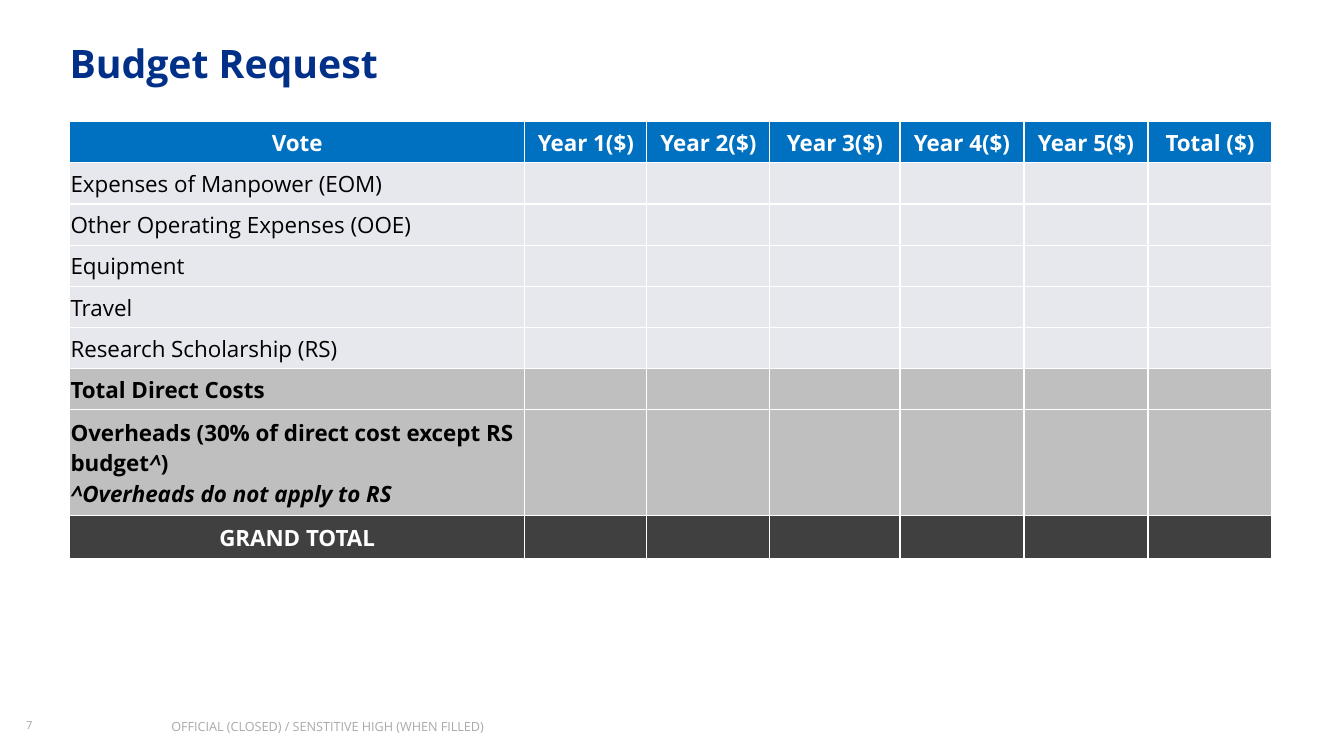
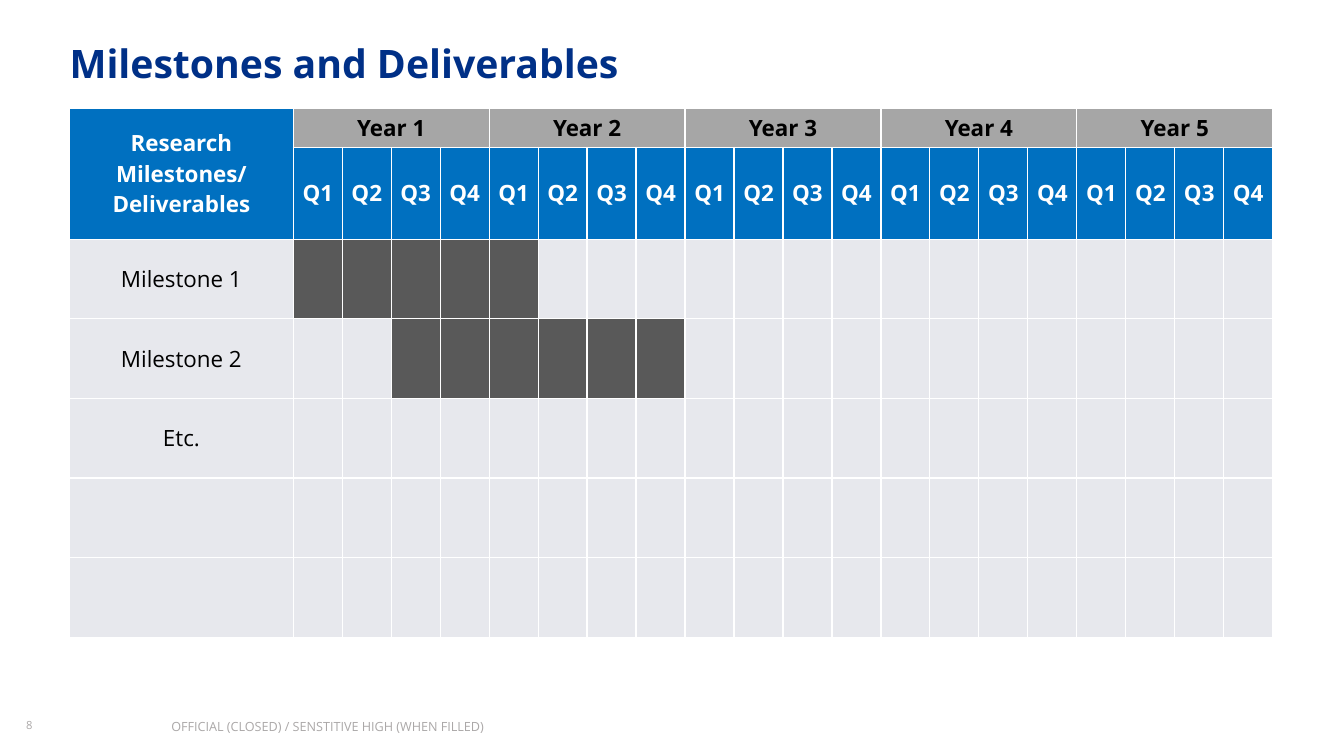
from lxml import etree
from pptx import Presentation
from pptx.dml.color import RGBColor
from pptx.enum.text import MSO_ANCHOR, MSO_AUTO_SIZE, PP_ALIGN
from pptx.oxml.ns import qn
from pptx.util import Pt

LEFT, CENTER = PP_ALIGN.LEFT, PP_ALIGN.CENTER
TOP, MIDDLE = MSO_ANCHOR.TOP, MSO_ANCHOR.MIDDLE
FIXED = MSO_AUTO_SIZE.NONE

FONT = "Open Sans"
HEX = {
    "navy": "003087",
    "blue": "0070C0",
    "pale": "E7E8ED",
    "silver": "BFBFBF",
    "grey": "A6A6A6",
    "slate": "595959",
    "dark": "404040",
    "black": "000000",
    "white": "FFFFFF",
    "foot": "ABA8A8",
}
EDGE = 49.7
NOTICE = "OFFICIAL (CLOSED) / SENSTITIVE HIGH (WHEN FILLED)"
YEARS, TERMS = 5, 4


def rgb(name):
    return RGBColor.from_string(HEX[name])


def write(frame, text, size=16, color="black", bold=False, align=LEFT,
          anchor=MIDDLE, pad=(0, 0, 0, 0)):
    frame.word_wrap = True
    frame.vertical_anchor = anchor
    sides = ("margin_left", "margin_top", "margin_right", "margin_bottom")
    for side, gap in zip(sides, pad):
        setattr(frame, side, Pt(gap))
    lines = [text] if isinstance(text, str) else text
    for row, line in enumerate(lines):
        para = frame.add_paragraph() if row else frame.paragraphs[0]
        para.alignment = align
        para.space_before = Pt(0)
        parts = (line,) if isinstance(line, str) else line
        for spot, part in enumerate(parts):
            if not part:
                continue
            run = para.add_run()
            run.text = part
            font = run.font
            font.name, font.size, font.bold = FONT, Pt(size), bold
            font.italic = spot % 2 == 1
            font.color.rgb = rgb(color)


def label(slide, text, left, width, size):
    box = slide.shapes.add_textbox(Pt(left), Pt(513.4), Pt(width), Pt(13.6))
    write(box.text_frame, text, size=size, color="foot", anchor=TOP)


def page(deck, title, number):
    slide = deck.slides.add_slide(deck.slide_layouts[5])
    head = slide.shapes.title
    head.left, head.top, head.width, head.height = (
        Pt(EDGE), Pt(28), Pt(793.4), Pt(38))
    write(head.text_frame, title, size=28, color="navy", bold=True, anchor=TOP)
    head.text_frame.auto_size = FIXED
    label(slide, str(number), 18.7, 56.9, 8)
    label(slide, NOTICE, 122.4, 383.8, 9)
    return slide


def border(cell):
    props = cell._tc.get_or_add_tcPr()
    for tag in ("a:lnL", "a:lnR", "a:lnT", "a:lnB"):
        line = etree.SubElement(props, qn(tag), w=str(Pt(1)))
        fill = etree.SubElement(line, qn("a:solidFill"))
        etree.SubElement(fill, qn("a:srgbClr"), val=HEX["white"])


def grid(slide, top, cols, rows):
    table = slide.shapes.add_table(
        len(rows), len(cols), Pt(EDGE), Pt(top),
        Pt(sum(cols)), Pt(sum(rows))).table
    table.first_row = table.horz_banding = False
    for col, width in zip(table.columns, cols):
        col.width = Pt(width)
    for row, height in zip(table.rows, rows):
        row.height = Pt(height)
    for cell in table.iter_cells():
        border(cell)
    return table


def paint(cell, fill, text="", **form):
    cell.fill.solid()
    cell.fill.fore_color.rgb = rgb(fill)
    write(cell.text_frame, text, **form)
    cell.vertical_anchor = MIDDLE
    for side, gap in zip(("left", "top", "right", "bottom"), form["pad"]):
        setattr(cell, "margin_" + side, Pt(gap))


def budget(deck):
    slide = page(deck, "Budget Request", 7)
    head = {"color": "white", "bold": True, "align": CENTER}
    items = ["Expenses of Manpower (EOM)", "Other Operating Expenses (OOE)",
             "Equipment", "Travel", "Research Scholarship (RS)"]
    over = [("Overheads (30% of direct cost except RS budget", "^", ")"),
            ("", "^Overheads do not apply to RS")]
    years = [f"Year {year}($)" for year in range(1, YEARS + 1)]
    rows = [("blue", ["Vote", *years, "Total ($)"], head)]
    rows += [("pale", [item], {}) for item in items]
    rows += [("silver", ["Total Direct Costs"], {"bold": True}),
             ("silver", [over], {"bold": True}),
             ("dark", ["GRAND TOTAL"], head)]
    table = grid(slide, 86.9, [325.2, 87.2, 87.8, 93] + [88.6] * 3,
                 [29.4] * 7 + [75.6, 30.6])
    for row, (fill, texts, form) in enumerate(rows):
        for col in range(len(table.columns)):
            text = texts[col] if col < len(texts) else ""
            paint(table.cell(row, col), fill, text, pad=(0.7, 0.7, 0.7, 0),
                  **form)


def plan(deck):
    slide = page(deck, "Milestones and Deliverables", 8)
    form = {"align": CENTER, "pad": (5, 0, 5, 0)}
    head = {"color": "white", "bold": True, **form}
    tasks = [("Milestone 1", range(1, 6)), ("Milestone 2", range(3, 9)),
             ("Etc.", ()), ("", ()), ("", ())]
    terms = YEARS * TERMS
    table = grid(slide, 77.4, [159.8] + [35] * terms,
                 [28, 65.4] + [56.9] * len(tasks))
    table.cell(0, 0).merge(table.cell(1, 0))
    paint(table.cell(0, 0), "blue",
          ["Research", "Milestones/", "Deliverables"], **head)
    for year in range(YEARS):
        first = 1 + year * TERMS
        cell = table.cell(0, first)
        cell.merge(table.cell(0, first + TERMS - 1))
        paint(cell, "grey", f"Year {year + 1}", bold=True, **form)
        for term in range(TERMS):
            paint(table.cell(1, first + term), "blue", f"Q{term + 1}", **head)
    for row, (name, span) in enumerate(tasks, 2):
        paint(table.cell(row, 0), "pale", name, **form)
        for col in range(1, terms + 1):
            paint(table.cell(row, col), "slate" if col in span else "pale",
                  **form)


def main():
    deck = Presentation()
    deck.slide_width, deck.slide_height = Pt(960), Pt(540)
    budget(deck)
    plan(deck)
    deck.save("out.pptx")


if __name__ == "__main__":
    main()
